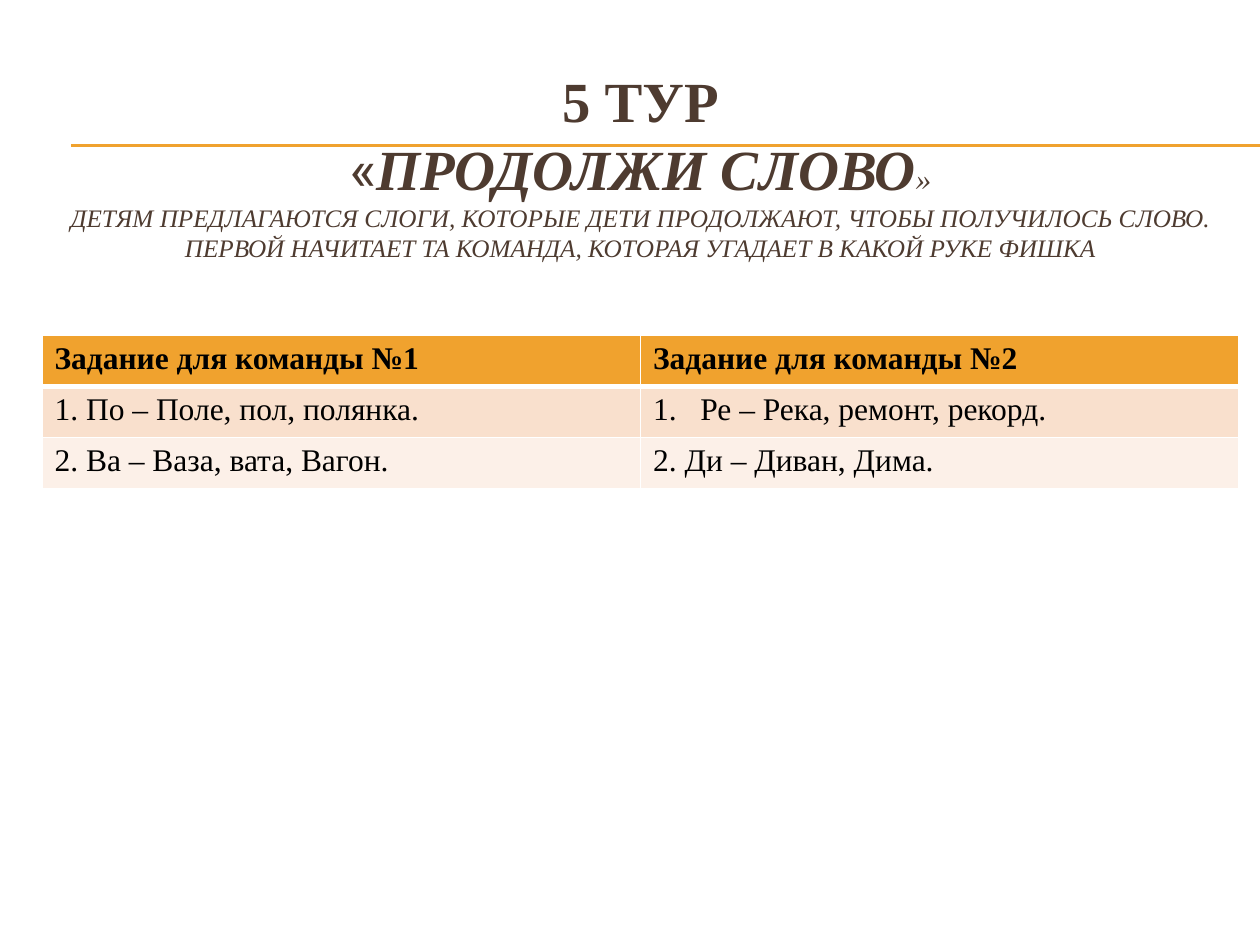
import pptx
import pptx.util
import pptx.dml.color
import pptx.enum.shapes
import pptx.enum.text
import pptx.oxml.ns
from lxml import etree

Pt = pptx.util.Pt
qn = pptx.oxml.ns.qn


def rgb(value):
    return pptx.dml.color.RGBColor.from_string(value)


class Deck:
    """Holds the style and the current slide."""
    font = "Times New Roman"
    accent, brown, black, white = "F0A22E", "4E3B30", "000000", "FFFFFF"
    row_fills = [accent, "F9E0CD", "FCF0E8"]

    def __init__(self, prs):
        self.s = prs.slides.add_slide(prs.slide_layouts[6])

    def run(self, p, text, color, **fmt):
        r = p.add_run()
        r.text = text
        r.font.color.rgb = rgb(color)
        for name, value in ({"name": self.font} | fmt).items():
            setattr(r.font, name, value)

    def line(self, x1, x2, y):
        sp = self.s.shapes.add_connector(
            pptx.enum.shapes.MSO_CONNECTOR.STRAIGHT, Pt(x1), Pt(y), Pt(x2), Pt(y))
        sp.line.color.rgb = rgb(self.accent)
        sp.line.width = Pt(0.75)
        etree.SubElement(sp._element.spPr, qn("a:effectLst"))

    def title(self, x, y, w, h, lines):
        """Centred paragraph; each line is a list of (text, format) runs."""
        sp = self.s.shapes.add_textbox(Pt(x), Pt(y), Pt(w), Pt(h))
        tf = sp.text_frame
        tf.word_wrap = True
        tf.vertical_anchor = pptx.enum.text.MSO_ANCHOR.MIDDLE
        p = tf.paragraphs[0]
        p.alignment = pptx.enum.text.PP_ALIGN.CENTER
        for i, runs in enumerate(lines):
            if i:
                p.add_line_break()
            for text, fmt in runs:
                self.run(p, text, self.brown, **fmt)

    def number(self, p, indent):
        """Turn the paragraph into an automatically numbered item."""
        pPr = p._p.get_or_add_pPr()
        pPr.set("marL", str(Pt(indent)))
        pPr.set("indent", str(-Pt(indent)))
        etree.SubElement(pPr, qn("a:buFont"), typeface="+mj-lt")
        etree.SubElement(pPr, qn("a:buAutoNum"), type="arabicPeriod")

    def borders(self, cell, widths):
        tcPr = cell._tc.get_or_add_tcPr()
        for i, (side, width) in enumerate(widths.items()):
            ln = etree.Element(qn("a:ln" + side), w=str(Pt(width)))
            fill = etree.SubElement(ln, qn("a:solidFill"))
            etree.SubElement(fill, qn("a:srgbClr"), val=self.white)
            tcPr.insert(i, ln)

    def table(self, x, y, w, row_h, rows, numbered):
        tbl = self.s.shapes.add_table(len(rows), len(rows[0]), Pt(x), Pt(y),
                                      Pt(w), Pt(row_h * len(rows))).table
        for i, row in enumerate(rows):
            for j, text in enumerate(row):
                cell = tbl.cell(i, j)
                cell.fill.solid()
                cell.fill.fore_color.rgb = rgb(self.row_fills[i])
                self.borders(cell, {"L": 1, "R": 1, "T": 3 if i == 1 else 1,
                                    "B": 3 if i == 0 else 1})
                p = cell.text_frame.paragraphs[0]
                if (i, j) in numbered:
                    self.number(p, 27)
                self.run(p, text, self.black, size=Pt(18), bold=i == 0)


def main():
    prs = pptx.Presentation()
    prs.slide_width, prs.slide_height = Pt(720), Pt(540)
    deck = Deck(prs)

    for y in (82.8, 83.5):
        deck.line(40.5, 720, y)

    big = {"size": Pt(32.4), "bold": True}
    note = {"size": Pt(14.4), "italic": True}
    deck.title(24, 36, 684, 116, [
        [("5 ТУР", big)],
        [("«", {"size": Pt(32.4), "name": "Roboto"}),
         ("ПРОДОЛЖИ СЛОВО", big | {"italic": True}),
         ("»", {"size": Pt(18), "italic": True})],
        [("ДЕТЯМ ПРЕДЛАГАЮТСЯ СЛОГИ, КОТОРЫЕ ДЕТИ ПРОДОЛЖАЮТ, ЧТОБЫ ПОЛУЧИЛОСЬ СЛОВО.", note)],
        [("ПЕРВОЙ НАЧИТАЕТ ТА КОМАНДА, КОТОРАЯ УГАДАЕТ В КАКОЙ РУКЕ ФИШКА", note)],
    ])

    deck.table(24, 191.5, 684, 29.2, [
        ["Задание для команды №1", "Задание для команды №2"],
        ["1. По – Поле, пол, полянка.", "Ре – Река, ремонт, рекорд."],
        ["2. Ва – Ваза, вата, Вагон.", "2. Ди – Диван, Дима."],
    ], numbered={(1, 1)})

    prs.save("out.pptx")


if __name__ == "__main__":
    main()
